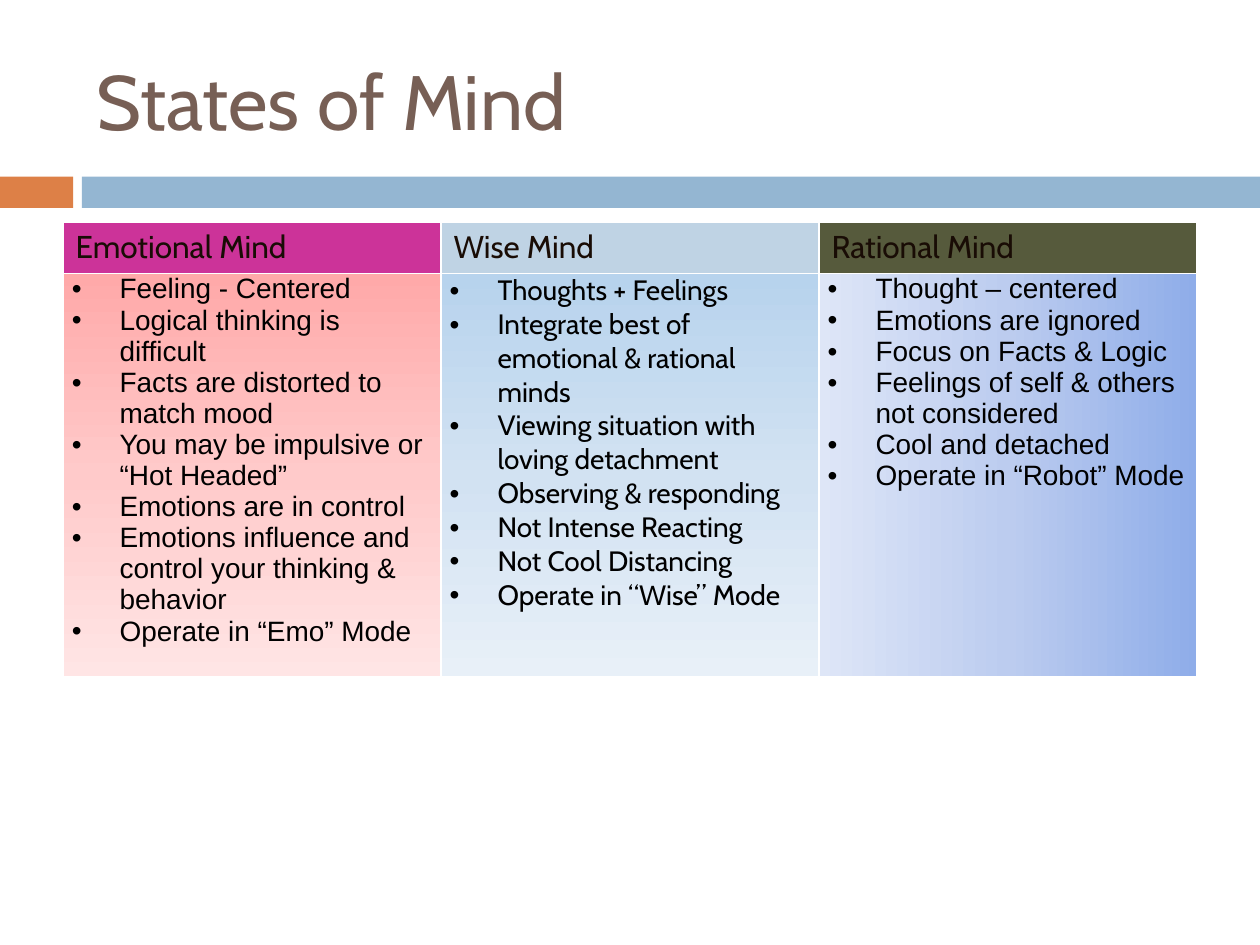
from lxml.etree import SubElement
from pptx import Presentation
from pptx.dml.color import RGBColor
from pptx.enum.shapes import MSO_SHAPE
from pptx.enum.text import MSO_ANCHOR
from pptx.oxml.ns import qn
from pptx.util import Emu, Inches, Pt

WIDTH, HEIGHT = Inches(10), Inches(7.5)
ROWS = (0.41, 2.95)
COLUMN = 0.3
COLUMNS = [
    {
        "heading": "Emotional Mind", "fill": "CC3399", "font": "Arial",
        "stops": ("FFA9A9", "FFCACA", "FFE5E5"), "angle": 90,
        "points": [
            "Feeling - Centered",
            "Logical thinking is difficult",
            "Facts are distorted to match mood",
            "You may be impulsive or “Hot Headed”",
            "Emotions are in control",
            "Emotions influence and control your thinking & behavior",
            "Operate in “Emo” Mode",
        ],
    },
    {
        "heading": "Wise Mind", "fill": "BFD3E4", "font": "Cabin",
        "stops": ("B7D3ED", "D2E2F2", "E8F0F8"), "angle": 90,
        "points": [
            "Thoughts + Feelings",
            "Integrate best of emotional & rational minds",
            "Viewing situation with loving detachment",
            "Observing & responding",
            "Not Intense Reacting",
            "Not Cool Distancing",
            "Operate in “Wise” Mode",
        ],
    },
    {
        "heading": "Rational Mind", "fill": "565A3C", "font": "Arial",
        "stops": ("8FADE9", "BCCCEF", "DEE6F7"), "angle": 180,
        "points": [
            "Thought – centered",
            "Emotions are ignored",
            "Focus on Facts & Logic",
            "Feelings of self & others not considered",
            "Cool and detached",
            "Operate in “Robot” Mode",
        ],
    },
]


def color(value):
    return RGBColor.from_string(value)


def apply(target, values):
    for name, value in values.items():
        setattr(target, name, value)


def share(left, top, width, height):
    return (Emu(int(WIDTH * left)), Emu(int(HEIGHT * top)),
            Emu(int(WIDTH * width)), Emu(int(HEIGHT * height)))


def write(paragraph, text, size, font, fill):
    run = paragraph.add_run()
    run.text = text
    apply(run.font, {"size": Pt(size), "name": font, "bold": False})
    run.font.color.rgb = color(fill)


def add_bar(slide, area, fill):
    shape = slide.shapes.add_shape(MSO_SHAPE.RECTANGLE, *share(*area))
    shape.shadow.inherit = False
    shape.fill.solid()
    shape.fill.fore_color.rgb = color(fill)
    shape.line.fill.background()


def add_title(slide, area, text):
    frame = slide.shapes.add_textbox(*share(*area)).text_frame
    apply(frame, {"word_wrap": True, "vertical_anchor": MSO_ANCHOR.MIDDLE})
    write(frame.paragraphs[0], text, 44, "Cabin", "775F55")


def add_color(parent, value):
    SubElement(parent, qn("a:srgbClr"), val=value)


def set_borders(cell, bottom):
    properties = cell._tc.get_or_add_tcPr()
    for side, width in {"L": 1, "R": 1, "T": 1, "B": bottom}.items():
        line = SubElement(properties, qn(f"a:ln{side}"), w=str(Pt(width)))
        add_color(SubElement(line, qn("a:solidFill")), "FFFFFF")


def set_gradient(cell, stops, angle):
    gradient = SubElement(cell._tc.get_or_add_tcPr(), qn("a:gradFill"), rotWithShape="1")
    stop_list = SubElement(gradient, qn("a:gsLst"))
    for index, value in enumerate(stops):
        add_color(SubElement(stop_list, qn("a:gs"), pos=str(index * 50000)), value)
    SubElement(gradient, qn("a:lin"), ang=str(angle * 60000), scaled="1")


def set_bullet(paragraph):
    properties = paragraph._p.get_or_add_pPr()
    indent = Inches(0.38)
    properties.set("marL", str(indent))
    properties.set("indent", str(-indent))
    SubElement(properties, qn("a:buFont"), typeface="Arial")
    SubElement(properties, qn("a:buChar"), char="•")


def fill_heading(cell, column):
    set_borders(cell, 1)
    cell.fill.solid()
    cell.fill.fore_color.rgb = color(column["fill"])
    write(cell.text_frame.paragraphs[0], column["heading"], 18, "Cabin", "190C05")


def fill_points(cell, column):
    set_borders(cell, 1)
    set_gradient(cell, column["stops"], column["angle"])
    apply(cell, {"margin_left": Inches(0.07), "margin_right": Inches(0.07),
                 "margin_top": 0, "margin_bottom": 0})
    frame = cell.text_frame
    for index, point in enumerate(column["points"]):
        paragraph = frame.add_paragraph() if index else frame.paragraphs[0]
        set_bullet(paragraph)
        write(paragraph, point, 16, column["font"], "000000")


def add_mind_table(slide, left, top):
    area = share(left, top, COLUMN * len(COLUMNS), Inches(sum(ROWS)) / HEIGHT)
    table = slide.shapes.add_table(len(ROWS), len(COLUMNS), *area).table
    apply(table, {"first_row": False, "horz_banding": False})
    for row, height in zip(table.rows, ROWS):
        row.height = Inches(height)
    for index, column in enumerate(COLUMNS):
        fill_heading(table.cell(0, index), column)
        fill_points(table.cell(1, index), column)


def main():
    presentation = Presentation()
    apply(presentation, {"slide_width": WIDTH, "slide_height": HEIGHT})
    slide = presentation.slides.add_slide(presentation.slide_layouts[6])
    add_bar(slide, (0, 0.187, 0.058, 0.033), "DD8047")
    add_bar(slide, (0.065, 0.187, 0.935, 0.033), "94B6D2")
    add_title(slide, (0.067, 0.033, 0.892, 0.144), "States of Mind")
    add_mind_table(slide, 0.05, 0.235)
    presentation.save("out.pptx")


main()
